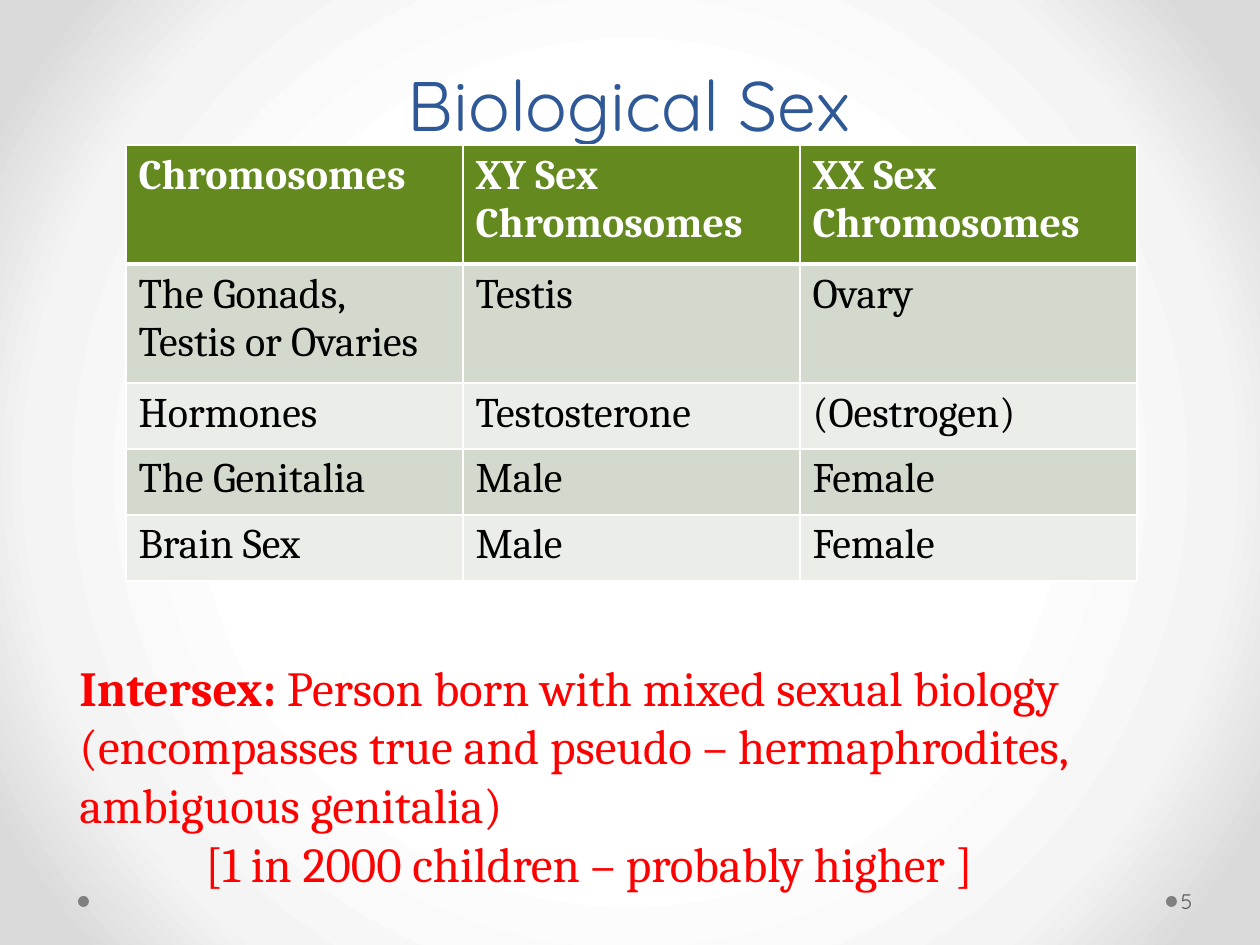
import pptx
import pptx.dml.color
import pptx.enum.shapes
import pptx.enum.text
import pptx.oxml
import pptx.oxml.ns
import pptx.util

PX = 914400 / 126
NAMESPACE = pptx.oxml.ns.nsdecls("a")
BODY_FONT = "Cambria"
DISPLAY_FONT = "Quicksand"
ROWS = [
    ("Chromosomes", "XY Sex Chromosomes", "XX Sex Chromosomes"),
    ("The Gonads, Testis or Ovaries", "Testis", "Ovary"),
    ("Hormones", "Testosterone", "(Oestrogen)"),
    ("The Genitalia", "Male", "Female"),
    ("Brain Sex", "Male", "Female"),
]
ROW_HEIGHTS = [119, 119, 66, 66, 66]
COLUMN_WIDTH = 337


def px(length):
    """Turn pixels into EMU."""
    return pptx.util.Emu(round(length * PX))


def color(value):
    """Turn a hex string into a colour."""
    return pptx.dml.color.RGBColor.from_string(value)


def style(paragraph, size, name, value, bold=None):
    """Set the font of a paragraph."""
    font = paragraph.font
    font.size, font.name, font.bold = pptx.util.Pt(size), name, bold
    font.color.rgb = color(value)


def paint_background(slide):
    """Fill the background with a radial gradient."""
    fill = slide.background.fill
    fill.gradient()
    gradient = slide.background._cSld.find(".//" + pptx.oxml.ns.qn("a:gradFill"))
    stops = "".join(
        f'<a:gs pos="{position}000"><a:srgbClr val="{value}"/></a:gs>'
        for position, value in [(50, "FFFFFF"), (76, "F4F4F4"), (92, "DADADA")]
    )
    radial = pptx.oxml.parse_xml(
        f'<a:gradFill {NAMESPACE} rotWithShape="1"><a:gsLst>{stops}</a:gsLst>'
        '<a:path path="circle"><a:fillToRect l="50000" t="50000" r="50000" b="50000"/>'
        "</a:path></a:gradFill>"
    )
    gradient.getparent().replace(gradient, radial)


def add_dot(slide, left, top):
    """Add a small grey footer dot."""
    shape = slide.shapes.add_shape(
        pptx.enum.shapes.MSO_SHAPE.OVAL, px(left), px(top), px(11), px(11)
    )
    shape.shadow.inherit = False
    shape.fill.solid()
    shape.fill.fore_color.rgb = color("808080")
    shape.line.fill.background()


def set_title(slide, text):
    """Place and format the title placeholder."""
    title = slide.shapes.title
    title.left, title.top, title.width, title.height = px(62), px(37), px(1134), px(115)
    frame = title.text_frame
    frame.text = text
    frame.vertical_anchor = pptx.enum.text.MSO_ANCHOR.BOTTOM
    paragraph = frame.paragraphs[0]
    paragraph.alignment = pptx.enum.text.PP_ALIGN.CENTER
    paragraph.line_spacing = pptx.util.Pt(58)
    style(paragraph, 40, DISPLAY_FONT, "2F5897")


def add_text_box(slide, left, top, width, height):
    """Add a wrapping text box and return its frame."""
    frame = slide.shapes.add_textbox(px(left), px(top), px(width), px(height)).text_frame
    frame.word_wrap = True
    return frame


def set_borders(cell, **widths):
    """Draw white borders, with widths in points by side."""
    properties = cell._tc.get_or_add_tcPr()
    for index, side in enumerate("LRTB"):
        width = pptx.util.Pt(widths.get(side, 1))
        properties.insert(index, pptx.oxml.parse_xml(
            f'<a:ln{side} {NAMESPACE} w="{width}"><a:solidFill>'
            f'<a:srgbClr val="FFFFFF"/></a:solidFill></a:ln{side}>'
        ))


def add_sex_table(slide):
    """Add the banded table of biological sex."""
    table = slide.shapes.add_table(
        len(ROWS), len(ROWS[0]), px(126), px(145),
        px(COLUMN_WIDTH * len(ROWS[0])), px(sum(ROW_HEIGHTS)),
    ).table
    for column in table.columns:
        column.width = px(COLUMN_WIDTH)
    for index, (texts, height) in enumerate(zip(ROWS, ROW_HEIGHTS)):
        row = table.rows[index]
        row.height = px(height)
        header = index == 0
        band = "63891F" if header else ("EAEDE8", "D3DACD")[index % 2]
        borders = {0: {"B": 3}, 1: {"T": 3}}.get(index, {})
        for cell, text in zip(row.cells, texts):
            cell.text = text
            cell.fill.solid()
            cell.fill.fore_color.rgb = color(band)
            set_borders(cell, **borders)
            style(cell.text_frame.paragraphs[0], 24, BODY_FONT,
                  "FFFFFF" if header else "000000", header)


def add_intersex_note(slide):
    """Add the red definition below the table."""
    frame = add_text_box(slide, 67, 651, 1131, 251)
    definition, frequency = frame.paragraphs[0], frame.add_paragraph()
    term = definition.add_run()
    term.text = "Intersex: "
    term.font.bold = True
    definition.add_run().text = (
        "Person born with mixed sexual biology (encompasses true and pseudo – "
        "hermaphrodites, ambiguous genitalia)"
    )
    frequency.text = "[1 in 2000 children – probably higher ]"
    frequency._p.get_or_add_pPr().set("marL", str(px(126)))
    for paragraph in frame.paragraphs:
        style(paragraph, 28, BODY_FONT, "FF0000")


def add_slide_number(slide, number):
    """Add the slide number beside its dot."""
    frame = add_text_box(slide, 1177, 876, 77, 50)
    frame.margin_left = px(4)
    frame.margin_right = px(6)
    frame.vertical_anchor = pptx.enum.text.MSO_ANCHOR.MIDDLE
    frame.text = number
    style(frame.paragraphs[0], 12, DISPLAY_FONT, "595959")


def main():
    """Build and save the slide."""
    presentation = pptx.Presentation()
    presentation.slide_width, presentation.slide_height = px(1260), px(945)
    slide = presentation.slides.add_slide(presentation.slide_layouts[5])
    paint_background(slide)
    for left in (1166, 78):
        add_dot(slide, left, 896)
    set_title(slide, "Biological Sex")
    add_slide_number(slide, "5")
    add_sex_table(slide)
    add_intersex_note(slide)
    presentation.save("out.pptx")


if __name__ == "__main__":
    main()
